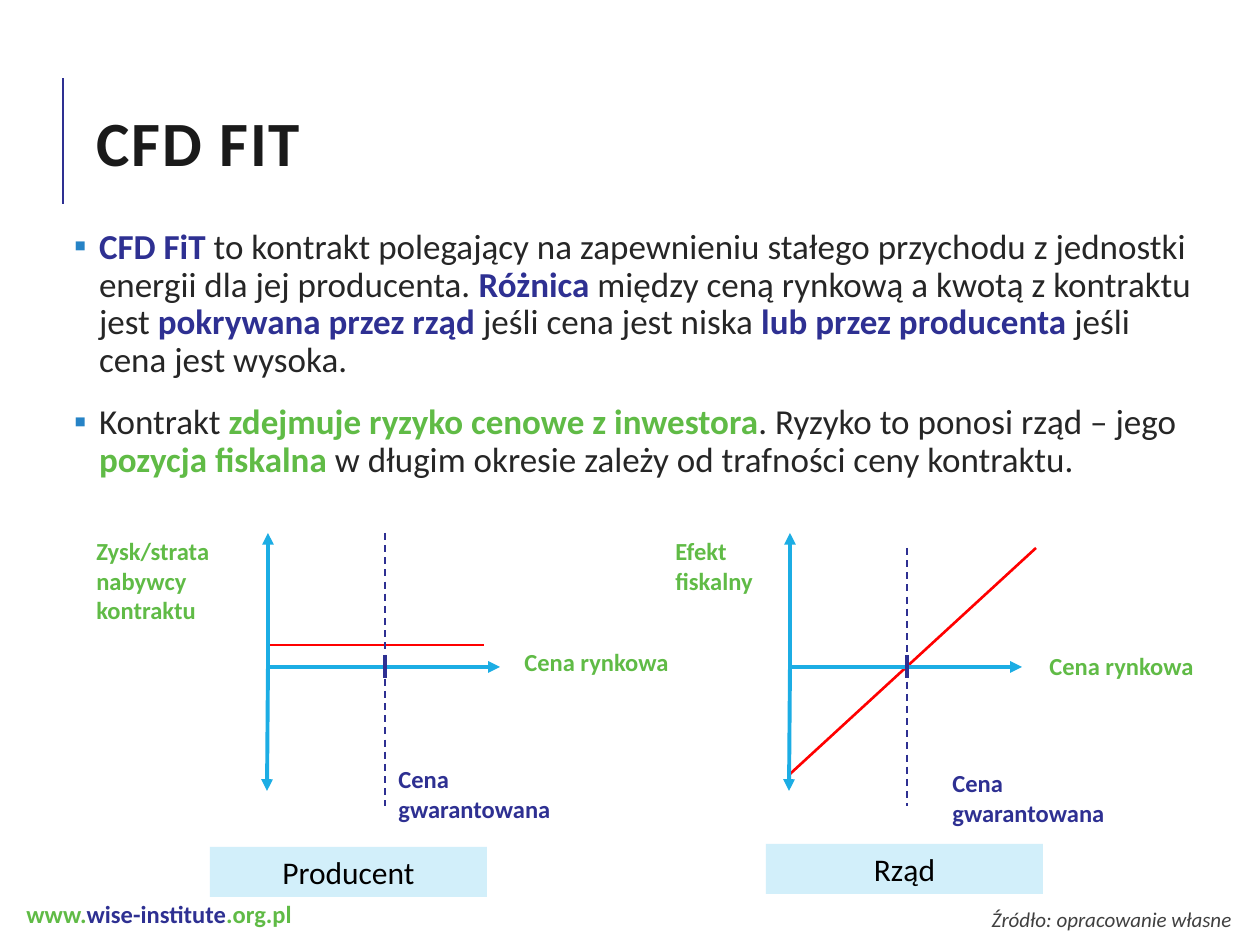
from lxml import etree
from pptx import Presentation
from pptx.dml.color import RGBColor
from pptx.enum.dml import MSO_LINE
from pptx.enum.shapes import MSO_CONNECTOR, MSO_SHAPE
from pptx.enum.text import MSO_ANCHOR, MSO_AUTO_SIZE, PP_ALIGN
from pptx.oxml.ns import qn
from pptx.util import Pt

PX = 914400 / 126
STRAIGHT = MSO_CONNECTOR.STRAIGHT
RECTANGLE = MSO_SHAPE.RECTANGLE
DASH = MSO_LINE.DASH
MIDDLE, TOP = MSO_ANCHOR.MIDDLE, MSO_ANCHOR.TOP
NO_FIT = MSO_AUTO_SIZE.NONE
LEFT, CENTER, RIGHT = PP_ALIGN.LEFT, PP_ALIGN.CENTER, PP_ALIGN.RIGHT

FONT = "Calibri"
COLORS = {
    "navy": "2E3092", "green": "60BB46", "title": "1A1A1A", "body": "262626",
    "bullet": "2683C6", "axis": "1CADE4", "payoff": "FF0000",
    "caption": "D2EFFA", "black": "000000", "source": "404040",
}

BULLETS = [
    [("CFD FiT ", "navy"),
     ("to kontrakt polegający na zapewnieniu stałego przychodu z jednostki "
      "energii dla jej producenta. ", "body"),
     ("Różnica", "navy"),
     (" między ceną rynkową a kwotą z kontraktu jest ", "body"),
     ("pokrywana przez rząd ", "navy"),
     ("jeśli cena jest niska ", "body"),
     ("lub przez producenta", "navy"),
     (" jeśli cena jest wysoka.", "body")],
    [("Kontrakt ", "body"),
     ("zdejmuje ryzyko cenowe z inwestora", "green"),
     (". Ryzyko to ponosi rząd – jego ", "body"),
     ("pozycja fiskalna ", "green"),
     ("w długim okresie zależy od trafności ceny kontraktu.", "body")],
]


def px(*lengths):
    return [round(length * PX) for length in lengths]


def rgb(color):
    return RGBColor.from_string(COLORS[color])


def add_run(paragraph, text, size, color, bold=False, italic=False):
    run = paragraph.add_run()
    run.text = text
    font = run.font
    font.name, font.size, font.bold, font.italic = FONT, Pt(size), bold, italic
    font.color.rgb = rgb(color)
    return run


def add_line(slide, start, end, color, width, dashed=False, arrow=False):
    line = slide.shapes.add_connector(STRAIGHT, *px(*start, *end))
    line.line.color.rgb = rgb(color)
    line.line.width = Pt(width)
    if dashed:
        line.line.dash_style = DASH
    if arrow:
        etree.SubElement(line.line._get_or_add_ln(), qn("a:tailEnd"), type="triangle")
    etree.SubElement(line._element.spPr, qn("a:effectLst"))


def add_text_box(slide, box, wrap=True):
    frame = slide.shapes.add_textbox(*px(*box)).text_frame
    frame.word_wrap = wrap
    return frame


def add_label(slide, box, lines, color):
    frame = add_text_box(slide, box)
    for index, line in enumerate(lines):
        paragraph = frame.add_paragraph() if index else frame.paragraphs[0]
        add_run(paragraph, line, 14, color, bold=True)


def add_caption(slide, box, text):
    caption = slide.shapes.add_shape(RECTANGLE, *px(*box))
    caption.shadow.inherit = False
    caption.fill.solid()
    caption.fill.fore_color.rgb = rgb("caption")
    caption.line.fill.background()
    paragraph = caption.text_frame.paragraphs[0]
    paragraph.alignment = CENTER
    add_run(paragraph, text, 18, "black")


def place(placeholder, box, anchor):
    placeholder.left, placeholder.top, placeholder.width, placeholder.height = px(*box)
    frame = placeholder.text_frame
    frame.word_wrap = True
    frame.auto_size = NO_FIT
    frame.vertical_anchor = anchor
    return frame


def add_title(slide, text):
    paragraph = place(slide.shapes.title, (84, 78, 920, 140), MIDDLE).paragraphs[0]
    paragraph.alignment = LEFT
    paragraph.line_spacing = 0.8
    run = add_run(paragraph, text, 36, "title", bold=True)
    run.font._element.set("spc", "100")


def set_bullet(paragraph):
    properties = paragraph._p.get_or_add_pPr()
    properties.set("marL", str(px(38)[0]))
    properties.set("indent", str(px(-25)[0]))
    bullet_color = etree.SubElement(properties, qn("a:buClr"))
    etree.SubElement(bullet_color, qn("a:srgbClr"), val=COLORS["bullet"])
    etree.SubElement(properties, qn("a:buFont"), typeface=FONT)
    etree.SubElement(properties, qn("a:buChar"), char="▪")


def add_bullets(slide):
    frame = place(slide.placeholders[1], (55, 223, 1155, 567), TOP)
    frame.margin_left, frame.margin_top, frame.margin_right, frame.margin_bottom = px(6, 6, 6, 6)
    for index, parts in enumerate(BULLETS):
        paragraph = frame.add_paragraph() if index else frame.paragraphs[0]
        set_bullet(paragraph)
        paragraph.line_spacing = 0.9
        paragraph.space_before = Pt(12 if index else 0)
        paragraph.space_after = Pt(2)
        for text, color in parts:
            add_run(paragraph, text, 20, color, bold=color != "body")


def add_payoff_chart(slide, origin_x, payoff, price_top):
    """Draw the axes, the payoff line and the guaranteed price marker."""
    origin_y = 667
    price_x = origin_x + 117
    add_line(slide, *payoff, "payoff", 1.5)
    for end in ((origin_x + 232, origin_y), (origin_x, 533), (origin_x - 1, 791)):
        add_line(slide, (origin_x, origin_y), end, "axis", 2.25, arrow=True)
    add_line(slide, (price_x, 655), (price_x, 678), "navy", 2.25)
    add_line(slide, (price_x, price_top), (price_x, 806), "navy", 1, dashed=True)


def add_footer(slide):
    address = add_text_box(slide, (14, 893, 292, 43), wrap=False).paragraphs[0]
    for text, color in (("www.", "green"), ("wise-institute", "navy"), (".org.pl", "green")):
        add_run(address, text, 14, color, bold=True)
    source = add_text_box(slide, (708, 900, 536, 38)).paragraphs[0]
    source.alignment = RIGHT
    add_run(source, "Źródło: opracowanie własne", 12, "source", italic=True)


def main():
    presentation = Presentation()
    presentation.slide_width, presentation.slide_height = px(1260, 945)
    slide = presentation.slides.add_slide(presentation.slide_layouts[1])

    add_line(slide, (63, 204), (63, 78), "navy", 1.5)
    add_title(slide, "CFD FIT")
    add_bullets(slide)

    add_payoff_chart(slide, 268, ((268, 645), (484, 645)), 533)
    add_payoff_chart(slide, 790, ((790, 774), (1036, 548)), 548)

    add_label(slide, (84, 530, 215, 102), ["Zysk/strata nabywcy", "kontraktu"], "green")
    add_label(slide, (663, 530, 174, 72), ["Efekt", "fiskalny"], "green")
    for left, top in ((512, 641), (1037, 645)):
        add_label(slide, (left, top, 215, 49), ["Cena rynkowa"], "green")
    for left, top in ((386, 758), (940, 762)):
        add_label(slide, (left, top, 218, 84), ["Cena gwarantowana"], "navy")

    add_caption(slide, (210, 847, 277, 50), "Producent")
    add_caption(slide, (766, 844, 277, 50), "Rząd")
    add_footer(slide)
    presentation.save("out.pptx")


if __name__ == "__main__":
    main()
